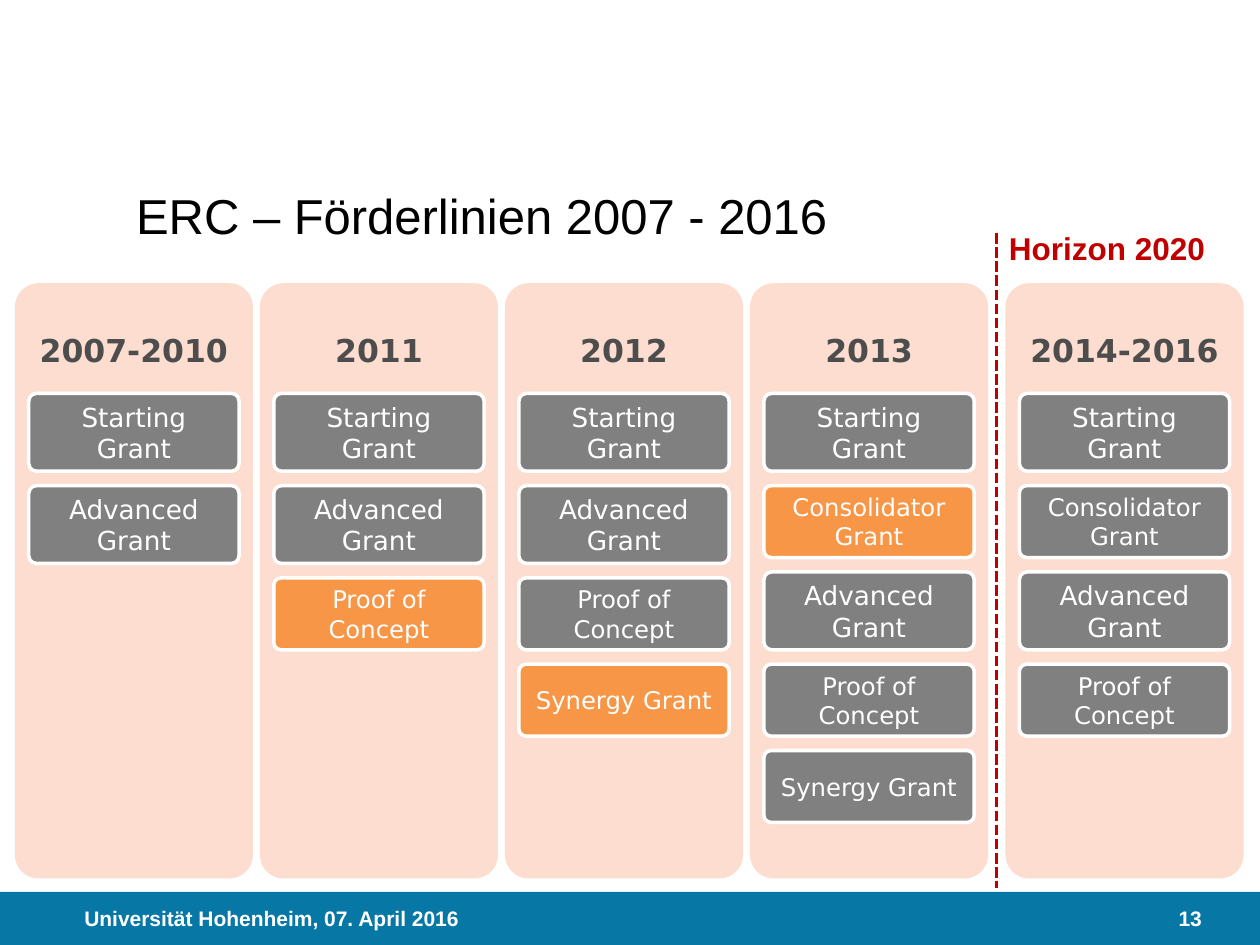
from dataclasses import dataclass

from lxml import etree
from pptx import Presentation
from pptx.dml.color import RGBColor
from pptx.enum.dml import MSO_LINE
from pptx.enum.shapes import MSO_CONNECTOR, MSO_SHAPE
from pptx.enum.text import MSO_ANCHOR, MSO_AUTO_SIZE, PP_ALIGN
from pptx.oxml.ns import qn
from pptx.util import Cm, Pt

RECT, ROUNDED = MSO_SHAPE.RECTANGLE, MSO_SHAPE.ROUNDED_RECTANGLE
STRAIGHT, DASHED = MSO_CONNECTOR.STRAIGHT, MSO_LINE.SQUARE_DOT
LEFT, CENTER, RIGHT = PP_ALIGN.LEFT, PP_ALIGN.CENTER, PP_ALIGN.RIGHT
TOP, MIDDLE = MSO_ANCHOR.TOP, MSO_ANCHOR.MIDDLE
TITLE_ONLY = 5


@dataclass(frozen=True)
class Theme:
    footer: str = "0778A5"
    column: str = "FCDDCF"
    grant: str = "808080"
    new_grant: str = "F79646"
    period: str = "4D4D4D"
    horizon: str = "C00000"
    light: str = "FFFFFF"
    dark: str = "000000"
    font: str = "Arial"
    chart_font: str = "DejaVu Sans"
    title_size: float = 28
    heading_size: float = 18
    main_size: float = 15
    extra_size: float = 13.9
    footer_size: float = 12


THEME = Theme()

STARTING, ADVANCED = "Starting Grant", "Advanced Grant"
CONSOLIDATOR, PROOF, SYNERGY = "Consolidator Grant", "Proof of Concept", "Synergy Grant"
MAIN_GRANTS = {STARTING, ADVANCED}

# Period, its grants from top to bottom, and the grant that is new
PERIODS = [
    ("2007-2010", [STARTING, ADVANCED], None),
    ("2011", [STARTING, ADVANCED, PROOF], PROOF),
    ("2012", [STARTING, ADVANCED, PROOF, SYNERGY], SYNERGY),
    ("2013", [STARTING, CONSOLIDATOR, ADVANCED, PROOF, SYNERGY], CONSOLIDATOR),
    ("2014-2016", [STARTING, CONSOLIDATOR, ADVANCED, PROOF], None),
]

# All lengths in centimetres
SLIDE_W, SLIDE_H = 25.4, 19.05
COLUMN_W, COLUMN_H, COLUMN_PITCH = 4.8, 12, 4.94
HORIZON_GAP = 0.21
CARD_W, CARD_GAP = 4.24, 0.29


def box(left, top, width, height):
    return Cm(left), Cm(top), Cm(width), Cm(height)


def write(shape, text, *, size, color, font=THEME.font, bold=False, align=LEFT,
          anchor=MIDDLE, inset=None, spacing=None, wrap=True):
    frame = shape.text_frame
    frame.auto_size = MSO_AUTO_SIZE.NONE
    frame.word_wrap = wrap
    frame.vertical_anchor = anchor
    if inset is not None:
        frame.margin_left = frame.margin_right = Cm(inset)
        frame.margin_top = frame.margin_bottom = Cm(inset)
    paragraph = frame.paragraphs[0]
    paragraph.alignment = align
    if spacing:
        paragraph.line_spacing = spacing
    run = paragraph.add_run()
    run.text = text
    run.font.name, run.font.size, run.font.bold = font, Pt(size), bold
    run.font.color.rgb = RGBColor.from_string(color)


def add_panel(shapes, kind, area, fill, outline=None):
    panel = shapes.add_shape(kind, *box(*area))
    panel.shadow.inherit = False
    panel.fill.solid()
    panel.fill.fore_color.rgb = RGBColor.from_string(fill)
    if kind == ROUNDED:
        panel.adjustments[0] = 0.1
    if outline:
        panel.line.color.rgb = RGBColor.from_string(outline)
        panel.line.width = Pt(2)
    else:
        panel.line.fill.background()
    return panel


def add_title(slide, left, top, width, height):
    title = slide.shapes.title
    title.left, title.top, title.width, title.height = box(left, top, width, height)
    write(title, "ERC – Förderlinien 2007 - 2016", size=THEME.title_size, color=THEME.dark)


def add_footer(slide, left, top, width, height):
    add_panel(slide.shapes, RECT, (left, top, width, height), THEME.footer)
    style = dict(size=THEME.footer_size, color=THEME.light, bold=True, inset=0)
    place = slide.shapes.add_textbox(*box(left + 1.7, top, 9, height))
    write(place, "Universität Hohenheim, 07. April 2016", **style)
    number = slide.shapes.add_textbox(*box(left + width - 7.67, top, 6.5, height))
    write(number, "13", align=RIGHT, **style)


def add_period(slide, left, top, width, height, period, grants, new_grant):
    shapes = slide.shapes.add_group_shape().shapes
    add_panel(shapes, ROUNDED, (left, top, width, height), THEME.column)
    heading = shapes.add_textbox(*box(left, top - 0.4, width, 3.6))
    write(heading, period, size=THEME.heading_size, color=THEME.period, bold=True,
          font=THEME.chart_font, align=CENTER, inset=0.18, spacing=0.9)

    # Grant cards, stacked with equal gaps
    card_left, card_top = left + (width - CARD_W) / 2, top + 2.22
    for grant in grants:
        is_main = grant in MAIN_GRANTS
        card_h = 1.57 if is_main else 1.45
        fill = THEME.new_grant if grant == new_grant else THEME.grant
        card = add_panel(shapes, ROUNDED, (card_left, card_top, CARD_W, card_h),
                         fill, THEME.light)
        write(card, grant, size=THEME.main_size if is_main else THEME.extra_size,
              color=THEME.light, font=THEME.chart_font, align=CENTER)
        card_top += card_h + CARD_GAP


def add_horizon(slide, left, top, height):
    divider = slide.shapes.add_connector(
        STRAIGHT, Cm(left), Cm(top), Cm(left), Cm(top + height))
    divider.line.color.rgb = RGBColor.from_string(THEME.horizon)
    divider.line.width = Pt(2)
    divider.line.dash_style = DASHED
    etree.SubElement(divider._element.spPr, qn("a:effectLst"))
    programme = slide.shapes.add_textbox(*box(left, top - 0.2, 5.2, 1.02))
    write(programme, "Horizon 2020", size=THEME.heading_size, color=THEME.horizon,
          bold=True, anchor=TOP)


def main():
    deck = Presentation()
    deck.slide_width, deck.slide_height = Cm(SLIDE_W), Cm(SLIDE_H)
    slide = deck.slides.add_slide(deck.slide_layouts[TITLE_ONLY])

    add_footer(slide, 0, 17.98, SLIDE_W, 1.07)
    add_title(slide, 2.49, 3.73, 21.64, 1.22)

    # Period columns; the last one stands apart, behind the divider
    for index, (period, grants, new_grant) in enumerate(PERIODS):
        left = 0.3 + index * COLUMN_PITCH
        if index == len(PERIODS) - 1:
            left += HORIZON_GAP
        add_period(slide, left, 5.71, COLUMN_W, COLUMN_H, period, grants, new_grant)

    add_horizon(slide, 20.09, 4.7, 13.2)
    deck.save("out.pptx")


if __name__ == "__main__":
    main()
